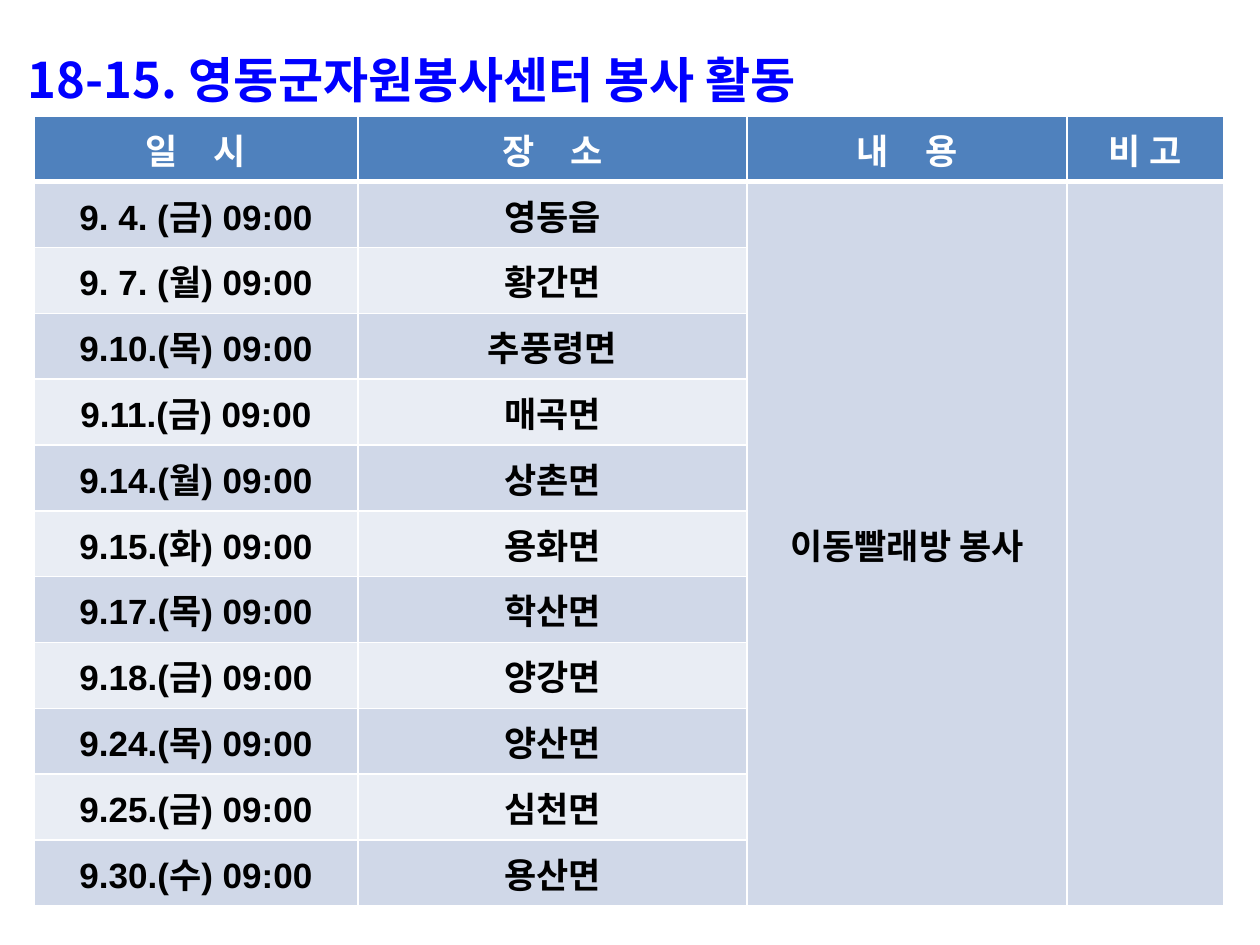
from dataclasses import dataclass

from lxml import etree
from pptx import Presentation
from pptx import util as u
from pptx.dml.color import RGBColor
from pptx.enum import text
from pptx.oxml import ns


@dataclass(frozen=True)
class Theme:
    title: str = "0000FF"
    header: str = "4F81BD"
    bands: tuple = ("D0D8E8", "E9EDF4")
    white: str = "FFFFFF"
    black: str = "000000"
    title_size: int = 28
    table_size: int = 20
    latin: str = "Arial"
    korean: str = "Noto Sans CJK KR"


THEME = Theme()


def format_run(run, size, color, latin, spacing=0):
    """Style a run; spacing is extra letter spacing in points."""
    font = run.font
    font.size = u.Pt(size)
    font.bold = True
    font.name = latin
    font.color.rgb = RGBColor.from_string(color)
    properties = font._element
    properties.find(ns.qn("a:latin")).addnext(
        properties.makeelement(ns.qn("a:ea"), {"typeface": THEME.korean}))
    if spacing:
        properties.set("spc", str(spacing * 100))


def format_cell(cell, fill, bottom_width):
    cell.vertical_anchor = text.MSO_ANCHOR.MIDDLE
    properties = cell._tc.get_or_add_tcPr()
    for side, width in (("L", 1), ("R", 1), ("T", 1), ("B", bottom_width)):
        line = etree.SubElement(properties, ns.qn(f"a:ln{side}"), w=str(u.Pt(width)))
        solid = etree.SubElement(line, ns.qn("a:solidFill"))
        etree.SubElement(solid, ns.qn("a:srgbClr"), val=THEME.white)
    cell.fill.solid()
    cell.fill.fore_color.rgb = RGBColor.from_string(fill)


presentation = Presentation()
presentation.slide_width = u.Inches(10)
presentation.slide_height = u.Inches(7.5)
slide = presentation.slides.add_slide(presentation.slide_layouts[5])

# Title
title = slide.shapes.title
title.left, title.top = u.Inches(0.12), u.Inches(0.11)
title.width, title.height = u.Inches(9.38), u.Inches(3.25)
frame = title.text_frame
frame.text = "18-15. 영동군자원봉사센터 봉사 활동"
frame.word_wrap = False
frame.auto_size = text.MSO_AUTO_SIZE.NONE
frame.vertical_anchor = text.MSO_ANCHOR.TOP
paragraph = frame.paragraphs[0]
paragraph.alignment = text.PP_ALIGN.LEFT
paragraph.line_spacing = 1.5
format_run(paragraph.runs[0], THEME.title_size, THEME.title, THEME.korean)

# Schedule
headers = ["일 시", "장 소", "내 용", "비 고"]
header_spacing = [8, 8, 8, 0]
visits = [
    ("9. 4. (금) 09:00", "영동읍"),
    ("9. 7. (월) 09:00", "황간면"),
    ("9.10.(목) 09:00", "추풍령면"),
    ("9.11.(금) 09:00", "매곡면"),
    ("9.14.(월) 09:00", "상촌면"),
    ("9.15.(화) 09:00", "용화면"),
    ("9.17.(목) 09:00", "학산면"),
    ("9.18.(금) 09:00", "양강면"),
    ("9.24.(목) 09:00", "양산면"),
    ("9.25.(금) 09:00", "심천면"),
    ("9.30.(수) 09:00", "용산면"),
]
rows = [headers] + [[*visit, "", ""] for visit in visits]
rows[1][2] = "이동빨래방 봉사"
column_widths = [2.57, 3.09, 2.54, 1.24]

table = slide.shapes.add_table(
    len(rows), len(headers), u.Inches(0.27), u.Inches(0.92),
    u.Inches(sum(column_widths)), u.Inches(6.27)).table
table.first_row = True
table.horz_banding = False
for column, width in zip(table.columns, column_widths):
    column.width = u.Inches(width)

for row_index, row in enumerate(rows):
    is_header = row_index == 0
    for column_index, label in enumerate(row):
        cell = table.cell(row_index, column_index)
        band = 0 if column_index > 1 else (row_index - 1) % 2
        format_cell(cell, THEME.header if is_header else THEME.bands[band],
                    3 if is_header else 1)
        if label:
            cell.text_frame.text = label
            paragraph = cell.text_frame.paragraphs[0]
            paragraph.alignment = text.PP_ALIGN.CENTER
            format_run(paragraph.runs[0], THEME.table_size,
                       THEME.white if is_header else THEME.black, THEME.latin,
                       header_spacing[column_index] if is_header else 0)

for column_index in (2, 3):
    table.cell(1, column_index).merge(table.cell(len(visits), column_index))

presentation.save("out.pptx")
